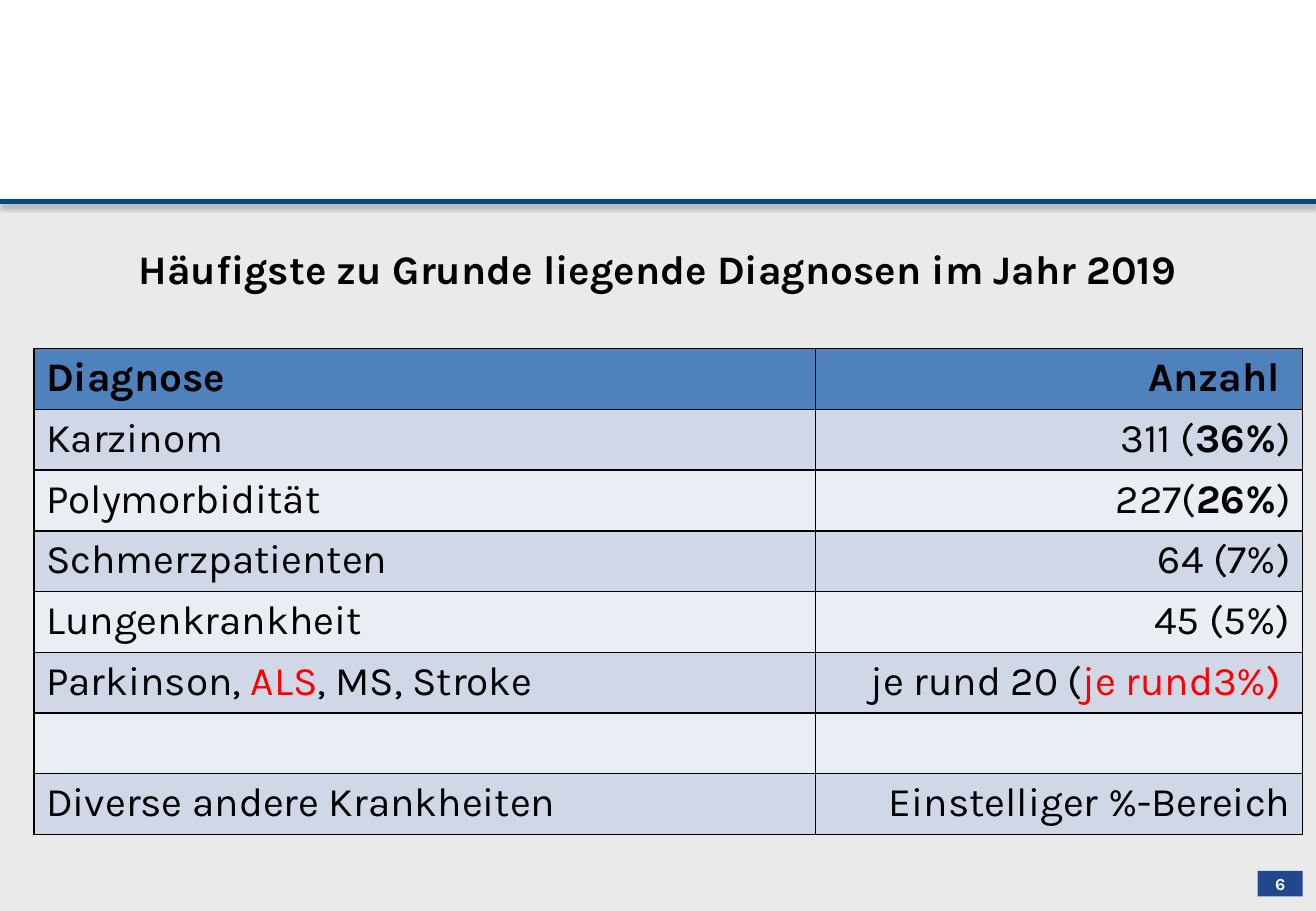
from typing import NamedTuple

from lxml.etree import SubElement
from pptx import Presentation
from pptx.dml.color import RGBColor
from pptx.enum.shapes import MSO_CONNECTOR as Connector, MSO_SHAPE as Shape
from pptx.enum.text import MSO_ANCHOR as Anchor, MSO_AUTO_SIZE as AutoSize, PP_ALIGN as Align
from pptx.oxml.ns import qn
from pptx.util import Emu, Pt

PX = 9144  # 100 px to the inch
FONT = "Karla"
BLACK, RED, WHITE = "000000", "FF0000", "FFFFFF"
PANEL, RULE, BADGE = "EAEAEA", "004A80", "21488F"
HEADER, BAND_DARK, BAND_LIGHT = "4F81BD", "D0D8E8", "E9EDF4"
SLIDE_W, SLIDE_H, RULE_Y = 1083, 750, 166
ROW_H = 50
COLUMN_WIDTHS = (643, 401)


class Part(NamedTuple):
    text: str
    bold: bool = False
    color: str = BLACK


class Row(NamedTuple):
    diagnosis: list[Part]
    count: list[Part]


ROWS = [
    Row([Part("Diagnose", True)], [Part("Anzahl ", True)]),
    Row([Part("Karzinom")], [Part("311 ("), Part("36%", True), Part(")")]),
    Row([Part("Polymorbidität")], [Part("227("), Part("26%", True), Part(")")]),
    Row([Part("Schmerzpatienten")], [Part("64 (7%)")]),
    Row([Part("Lungenkrankheit")], [Part("45 (5%)")]),
    Row([Part("Parkinson, "), Part("ALS", color=RED), Part(", MS, Stroke")],
        [Part("je rund 20 ("), Part("je rund3%) ", color=RED)]),
    Row([], []),
    Row([Part("Diverse andere Krankheiten")], [Part("Einstelliger %-Bereich")]),
]


def px(*lengths: int) -> list[Emu]:
    return [Emu(length * PX) for length in lengths]


def rgb(color: str) -> RGBColor:
    return RGBColor.from_string(color)


def write(frame, parts: list[Part], size: int, align: Align) -> None:
    paragraph = frame.paragraphs[0]
    paragraph.alignment = align
    for part in parts:
        run = paragraph.add_run()
        run.text = part.text
        run.font.name = FONT
        run.font.size = Pt(size)
        run.font.bold = part.bold
        run.font.color.rgb = rgb(part.color)


def add_block(shapes, box: tuple[int, int, int, int], color: str):
    block = shapes.add_shape(Shape.RECTANGLE, *px(*box))
    block.shadow.inherit = False
    block.fill.solid()
    block.fill.fore_color.rgb = rgb(color)
    block.line.fill.background()
    return block


def add_rule(shapes) -> None:
    rule = shapes.add_connector(Connector.STRAIGHT, *px(0, RULE_Y, SLIDE_W, RULE_Y))
    rule.line.color.rgb = rgb(RULE)
    rule.line.width = Pt(3)
    effects = SubElement(rule._element.spPr, qn("a:effectLst"))
    shadow = SubElement(effects, qn("a:outerShdw"), blurRad=str(Pt(3.1)),
                        dist=str(Pt(1.8)), dir="5400000", rotWithShape="0")
    shade = SubElement(shadow, qn("a:srgbClr"), val=BLACK)
    SubElement(shade, qn("a:alpha"), val="35000")


def add_borders(cell) -> None:
    properties = cell._tc.get_or_add_tcPr()
    for side in ("lnL", "lnR", "lnT", "lnB"):
        border = SubElement(properties, qn(f"a:{side}"), w=str(Pt(1)))
        fill = SubElement(border, qn("a:solidFill"))
        SubElement(fill, qn("a:srgbClr"), val=BLACK)


def add_diagnoses(shapes) -> None:
    box = px(28, 287, sum(COLUMN_WIDTHS), ROW_H * len(ROWS))
    table = shapes.add_table(len(ROWS), len(COLUMN_WIDTHS), *box).table
    for column, width in zip(table.columns, COLUMN_WIDTHS):
        column.width = Emu(width * PX)
    for r, row in enumerate(ROWS):
        band = HEADER if r == 0 else BAND_DARK if r % 2 else BAND_LIGHT
        for c, (parts, align) in enumerate(zip(row, (Align.LEFT, Align.RIGHT))):
            cell = table.cell(r, c)
            add_borders(cell)
            cell.fill.solid()
            cell.fill.fore_color.rgb = rgb(band)
            write(cell.text_frame, parts, 24, align)


def main() -> None:
    deck = Presentation()
    deck.slide_width, deck.slide_height = px(SLIDE_W, SLIDE_H)
    slide = deck.slides.add_slide(deck.slide_layouts[5])
    shapes = slide.shapes
    heading = shapes.title

    # Background panel and rule
    add_block(shapes, (0, RULE_Y + 1, SLIDE_W, SLIDE_H - RULE_Y - 1), PANEL)
    add_rule(shapes)

    # Page number
    badge = add_block(shapes, (1035, 717, 37, 21), BADGE)
    frame = badge.text_frame
    frame.margin_left = frame.margin_right = frame.margin_top = frame.margin_bottom = 0
    frame.vertical_anchor = Anchor.MIDDLE
    write(frame, [Part("6", True, WHITE)], 10, Align.CENTER)

    # Heading, raised above the panel
    shapes._spTree.append(heading._element)
    heading.left, heading.top, heading.width, heading.height = px(28, 196, 1026, 50)
    heading.text_frame.auto_size = AutoSize.NONE
    heading.text_frame.vertical_anchor = Anchor.MIDDLE
    write(heading.text_frame,
          [Part("Häufigste zu Grunde liegende Diagnosen im Jahr 2019", True)], 24, Align.CENTER)

    # Diagnoses table
    add_diagnoses(shapes)
    deck.save("out.pptx")


if __name__ == "__main__":
    main()
